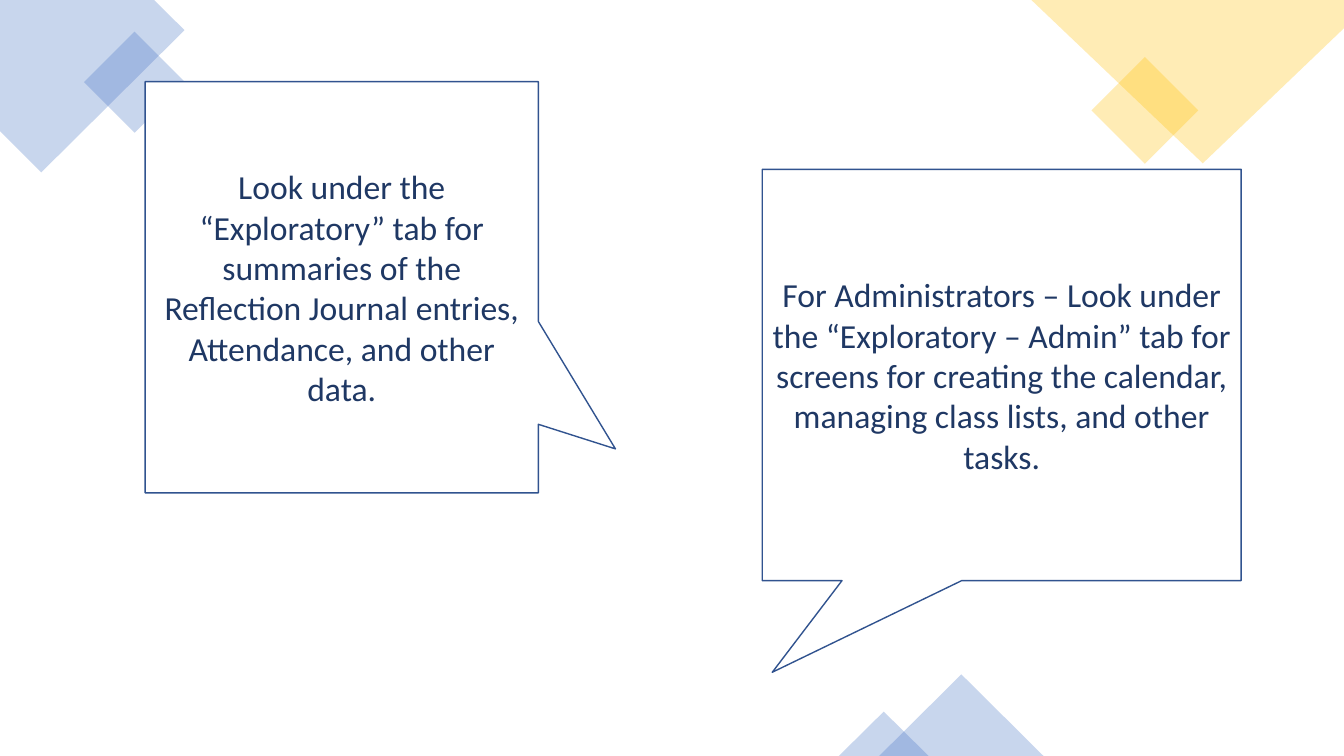
from dataclasses import dataclass

from pptx import Presentation
from pptx.dml.color import RGBColor
from pptx.enum.shapes import MSO_SHAPE
from pptx.enum.text import MSO_ANCHOR, PP_ALIGN
from pptx.oxml.ns import qn
from pptx.shapes.autoshape import Shape
from pptx.slide import Slide
from pptx.util import Inches, Pt
from lxml.etree import SubElement

BLUE = RGBColor(0x44, 0x72, 0xC4)
GOLD = RGBColor(0xFF, 0xC0, 0x00)
WHITE = RGBColor(0xFF, 0xFF, 0xFF)
OUTLINE = RGBColor(0x31, 0x53, 0x8F)
NAVY = RGBColor(0x1F, 0x38, 0x64)
OPACITY = 29


@dataclass
class Patch:
    points: list[tuple[float, float]]
    color: RGBColor


@dataclass
class Accent:
    kind: MSO_SHAPE
    box: tuple[float, float, float, float]
    color: RGBColor
    rotation: float = 0


@dataclass
class Callout:
    box: tuple[float, float, float, float]
    tip: tuple[float, float]
    text: str


# Corner patches, as outlines in inches
PATCHES = [
    Patch([(0, 0), (1.53, 0), (1.83, 0.3), (0.41, 1.71), (0, 1.3)], BLUE),
    Patch([(10.23, 0), (13.33, 0), (13.33, 0.28), (11.93, 1.62)], GOLD),
]

ACCENTS = [
    Accent(MSO_SHAPE.RECTANGLE, (0.98, 0.46, 0.71, 0.71), BLUE, 315),
    Accent(MSO_SHAPE.RECTANGLE, (10.98, 0.72, 0.75, 0.75), GOLD, 315),
    Accent(MSO_SHAPE.ISOSCELES_TRIANGLE, (8.72, 6.69, 1.63, 0.81), BLUE),
    Accent(MSO_SHAPE.ISOSCELES_TRIANGLE, (8.32, 7.06, 0.89, 0.44), BLUE),
]

CALLOUTS = [
    Callout((1.44, 0.81, 3.9, 4.08), (0.696, 0.393),
            "Look under the “Exploratory” tab for summaries of the "
            "Reflection Journal entries, Attendance, and other data."),
    Callout((7.56, 1.68, 4.75, 4.08), (-0.479, 0.723),
            "For Administrators – Look under the “Exploratory – Admin” tab "
            "for screens for creating the calendar, managing class lists, "
            "and other tasks."),
]


def tint(shape: Shape, color: RGBColor) -> None:
    """Give a shape a translucent fill without an outline."""
    shape.shadow.inherit = False
    shape.line.fill.background()
    shape.fill.solid()
    shape.fill.fore_color.rgb = color
    rgb = shape._element.spPr.find(qn("a:solidFill")).find(qn("a:srgbClr"))
    SubElement(rgb, qn("a:alpha"), val=str(OPACITY * 1000))


def add_patch(s: Slide, patch: Patch) -> None:
    start, *rest = [(Inches(x), Inches(y)) for x, y in patch.points]
    builder = s.shapes.build_freeform(*start)
    builder.add_line_segments(rest, close=True)
    tint(builder.convert_to_shape(), patch.color)


def add_accent(s: Slide, accent: Accent) -> None:
    sp = s.shapes.add_shape(accent.kind, *map(Inches, accent.box))
    sp.rotation = accent.rotation
    tint(sp, accent.color)


def set_text(sp: Shape, text: str, *, size: float = 24, font: str = "Calibri",
             color: RGBColor = NAVY, align: PP_ALIGN = PP_ALIGN.CENTER) -> None:
    tf = sp.text_frame
    tf.word_wrap = True
    tf.vertical_anchor = MSO_ANCHOR.MIDDLE
    p = tf.paragraphs[0]
    p.alignment = align
    r = p.add_run()
    r.text = text
    r.font.size = Pt(size)
    r.font.name = font
    r.font.color.rgb = color


def add_callout(s: Slide, callout: Callout) -> None:
    sp = s.shapes.add_shape(MSO_SHAPE.RECTANGULAR_CALLOUT,
                            *map(Inches, callout.box))
    sp.adjustments[0], sp.adjustments[1] = callout.tip
    sp.shadow.inherit = False
    sp.fill.solid()
    sp.fill.fore_color.rgb = WHITE
    sp.line.color.rgb = OUTLINE
    sp.line.width = Pt(1)
    set_text(sp, callout.text)


def main() -> None:
    prs = Presentation()
    prs.slide_width, prs.slide_height = Inches(13.33), Inches(7.5)
    s = prs.slides.add_slide(prs.slide_layouts[6])

    # Corner decoration
    for patch in PATCHES:
        add_patch(s, patch)
    for accent in ACCENTS:
        add_accent(s, accent)

    # Speech bubbles
    for callout in CALLOUTS:
        add_callout(s, callout)

    prs.save("out.pptx")


if __name__ == "__main__":
    main()
